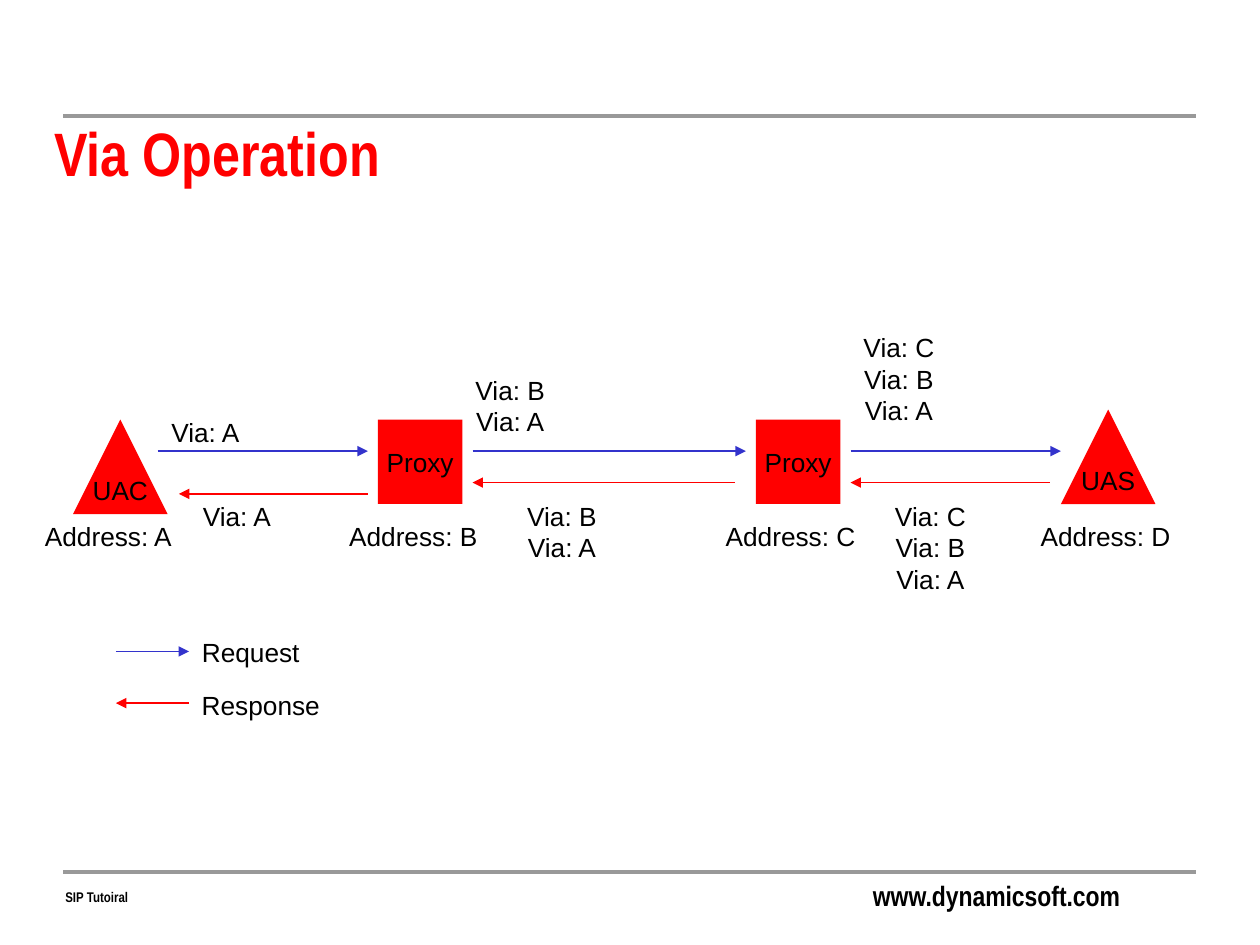
from typing import NamedTuple

import lxml.etree
import pptx
import pptx.dml.color
import pptx.enum.shapes
import pptx.enum.text
import pptx.oxml.ns
import pptx.util

Inches = pptx.util.Inches
Pt = pptx.util.Pt
RGBColor = pptx.dml.color.RGBColor
Kind = pptx.enum.shapes.MSO_SHAPE
Align = pptx.enum.text.PP_ALIGN
Anchor = pptx.enum.text.MSO_ANCHOR
Fit = pptx.enum.text.MSO_AUTO_SIZE
qn = pptx.oxml.ns.qn

RED = RGBColor(0xFF, 0x00, 0x00)
BLUE = RGBColor(0x33, 0x33, 0xCC)
GRAY = RGBColor(0x99, 0x99, 0x99)
BLACK = RGBColor(0x00, 0x00, 0x00)

SANS = "Arial"
NARROW = "Arial Narrow"
LINE = 0.25
PAD = 0.1


class Node(NamedTuple):
    text: str
    kind: Kind
    left: float
    top: float
    size: float


class Label(NamedTuple):
    text: str
    left: float
    top: float
    width: float


class Arrow(NamedTuple):
    start: float
    end: float
    y: float
    color: RGBColor


NODES = [
    Node("Proxy", Kind.RECTANGLE, 3, 3.33, 0.67),
    Node("Proxy", Kind.RECTANGLE, 6, 3.33, 0.67),
    Node("UAC", Kind.ISOSCELES_TRIANGLE, 0.58, 3.33, 0.75),
    Node("UAS", Kind.ISOSCELES_TRIANGLE, 8.42, 3.25, 0.75),
]

LABELS = [
    Label("Address: A", 0.25, 4.08, 1.22),
    Label("Address: B", 2.67, 4.08, 1.22),
    Label("Address: C", 5.66, 4.08, 1.23),
    Label("Address: D", 8.16, 4.08, 1.23),
    Label("Via: A", 1.25, 3.25, 0.76),
    Label("Via: B\nVia: A", 3.67, 2.92, 0.76),
    Label("Via: C\nVia: B\nVia: A", 6.75, 2.58, 0.77),
    Label("Via: A", 1.5, 3.92, 0.76),
    Label("Via: B\nVia: A", 4.08, 3.92, 0.76),
    Label("Via: C\nVia: B\nVia: A", 7, 3.92, 0.77),
    Label("Request", 1.5, 5, 0.98),
    Label("Response", 1.5, 5.42, 1.14),
]

ARROWS = [
    Arrow(1.25, 2.92, 3.58, BLUE),
    Arrow(3.75, 5.92, 3.58, BLUE),
    Arrow(6.75, 8.42, 3.58, BLUE),
    Arrow(8.33, 6.75, 3.83, RED),
    Arrow(5.83, 3.75, 3.83, RED),
    Arrow(2.92, 1.42, 3.92, RED),
    Arrow(0.92, 1.5, 5.17, BLUE),
    Arrow(1.5, 0.92, 5.58, RED),
]


def write(frame, text: str, size: float, font: str = SANS,
          color: RGBColor = BLACK, bold: bool = False,
          align: Align = Align.CENTER, anchor: Anchor = Anchor.MIDDLE,
          wrap: bool = False) -> None:
    frame.auto_size = Fit.NONE
    frame.word_wrap = wrap
    frame.vertical_anchor = anchor
    frame.margin_left = frame.margin_right = Inches(PAD)
    frame.margin_top = frame.margin_bottom = Inches(PAD / 2)
    para = frame.paragraphs[0]
    para.alignment = align
    for index, line in enumerate(text.split("\n")):
        if index:
            para.add_line_break()
        run = para.add_run()
        run.text = line
        run.font.name = font
        run.font.size = Pt(size)
        run.font.bold = bold
        run.font.color.rgb = color


def add_box(slide, left: float, top: float, width: float, height: float):
    return slide.shapes.add_textbox(
        Inches(left), Inches(top), Inches(width), Inches(height)).text_frame


def add_line(slide, start: float, end: float, y: float,
             color: RGBColor, width: float):
    line = slide.shapes.add_connector(
        pptx.enum.shapes.MSO_CONNECTOR.STRAIGHT,
        Inches(start), Inches(y), Inches(end), Inches(y))
    line.line.color.rgb = color
    line.line.width = Pt(width)
    lxml.etree.SubElement(line._element.spPr, qn("a:effectLst"))
    return line


def add_arrow(slide, arrow: Arrow) -> None:
    line = add_line(slide, arrow.start, arrow.end, arrow.y, arrow.color, 1)
    stroke = line._element.spPr.find(qn("a:ln"))
    lxml.etree.SubElement(stroke, qn("a:tailEnd"), type="triangle")


def add_node(slide, node: Node) -> None:
    shape = slide.shapes.add_shape(
        node.kind, Inches(node.left), Inches(node.top),
        Inches(node.size), Inches(node.size))
    shape.shadow.inherit = False
    shape.fill.solid()
    shape.fill.fore_color.rgb = RED
    shape.line.fill.background()
    write(shape.text_frame, node.text, 15)


def add_label(slide, label: Label) -> None:
    height = PAD + LINE * len(label.text.split("\n"))
    frame = add_box(slide, label.left, label.top, label.width, height)
    write(frame, label.text, 15)


def main() -> None:
    deck = pptx.Presentation()
    deck.slide_width = Inches(10)
    deck.slide_height = Inches(7.5)
    slide = deck.slides.add_slide(deck.slide_layouts[5])

    for y in (0.92, 6.92):
        add_line(slide, 0.5, 9.49, y, GRAY, 2.25)
    write(add_box(slide, 6.83, 6.92, 2.33, 0.37), "www.dynamicsoft.com", 16,
          NARROW, bold=True, align=Align.LEFT, anchor=Anchor.TOP, wrap=True)
    write(add_box(slide, 0.42, 7, 5.58, 0.23), "SIP Tutoiral", 8,
          NARROW, bold=True, align=Align.LEFT, wrap=True)

    title = slide.shapes.title
    title.left, title.top = Inches(0.33), Inches(0.92)
    title.width, title.height = Inches(9), Inches(0.58)
    write(title.text_frame, "Via Operation", 35, NARROW, RED,
          bold=True, align=Align.LEFT, wrap=True)

    for node in NODES:
        add_node(slide, node)
    for label in LABELS:
        add_label(slide, label)
    for arrow in ARROWS:
        add_arrow(slide, arrow)

    deck.save("out.pptx")


if __name__ == "__main__":
    main()
